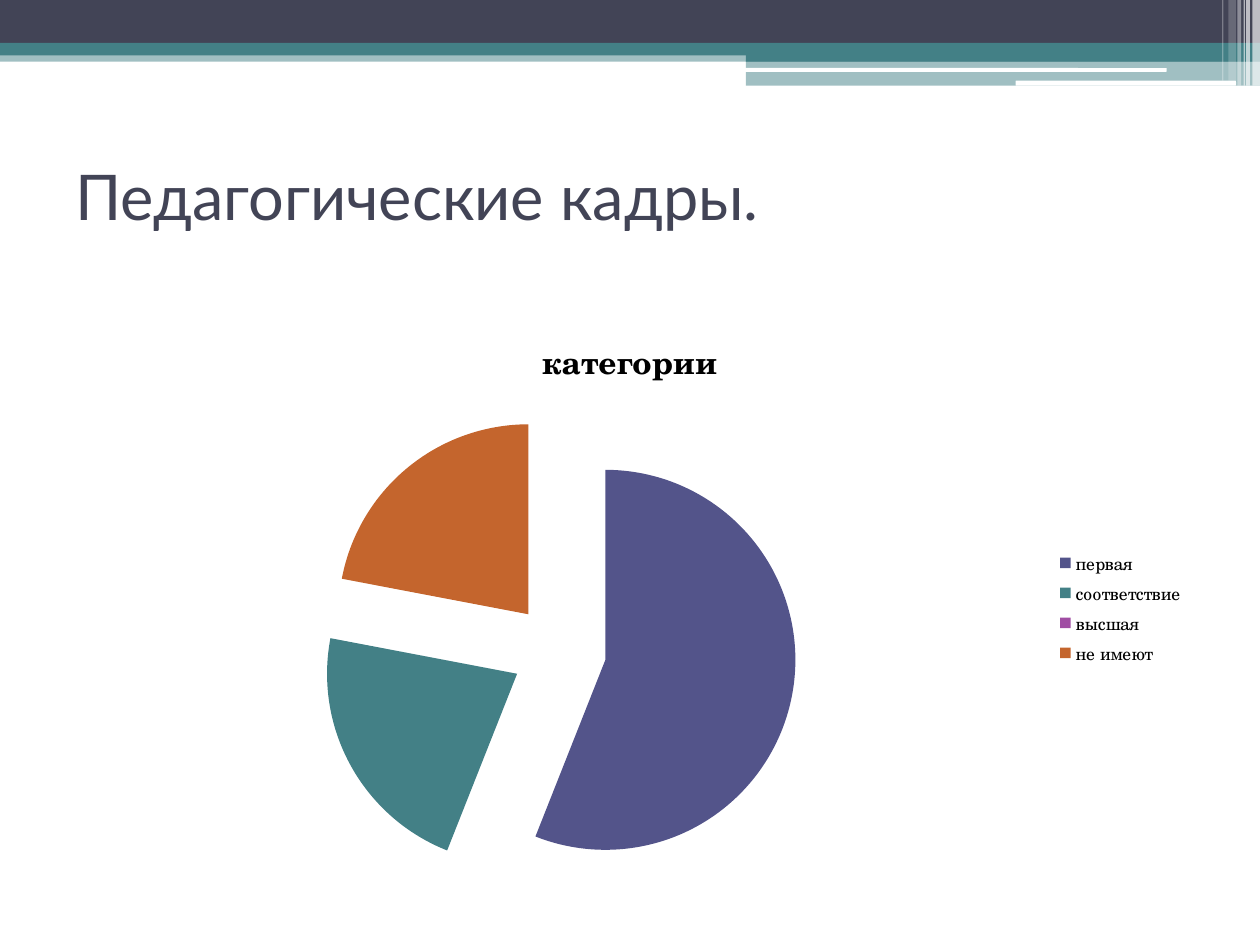
from lxml import etree
from pptx import Presentation
from pptx.chart.data import CategoryChartData
from pptx.dml.color import RGBColor
from pptx.enum.chart import XL_CHART_TYPE as CT, XL_LEGEND_POSITION as LP
from pptx.enum.shapes import MSO_SHAPE as SHAPE
from pptx.enum.text import MSO_ANCHOR as ANCHOR
from pptx.oxml.ns import qn
from pptx.util import Inches, Pt

COLORS = {"dark": "424456", "teal": "438086", "white": "FFFFFF", "text": "000000",
          "indigo": "53548A", "purple": "A04DA3", "orange": "C4652D"}
FONTS = {"title": "Lato", "chart": "TeX Gyre Schola"}


def rgb(name):
    return RGBColor.from_string(COLORS[name])


def style_font(font, formats):
    for name, value in formats.items():
        if name == "color":
            font.color.rgb = rgb(value)
        else:
            setattr(font, name, value)


def add_bar(slide, box, color, alpha=100, kind=SHAPE.RECTANGLE):
    sp = slide.shapes.add_shape(kind, *(Inches(v) for v in box))
    sp.shadow.inherit = False
    sp.line.fill.background()
    sp.fill.solid()
    sp.fill.fore_color.rgb = rgb(color)
    if alpha < 100:
        clr = sp.fill._xPr.find(qn("a:solidFill"))[0]
        etree.SubElement(clr, qn("a:alpha"), val=str(alpha * 1000))
    return sp


def add_header(slide, left, top, width):
    # Full-width bands: top, height, colour, opacity
    for y, h, color, alpha in [(0.4, 0.09, "teal", 50), (0, 0.34, "dark", 100),
                               (0.34, 0.1, "teal", 100)]:
        add_bar(slide, (left, top + y, width, h), color, alpha)

    # Step on the right
    step = 5.92
    for y, h, alpha in [(0.39, 0.1, 100), (0.48, 0.2, 50)]:
        add_bar(slide, (left + step, top + y, width - step, h), "teal", alpha)

    # White rules
    for x, y, w, h in [(5.91, 0.54, 3.35, 0.03), (8.06, 0.64, 1.75, 0.04)]:
        add_bar(slide, (left + x, top + y, w, h), "white", kind=SHAPE.ROUNDED_RECTANGLE)

    # Translucent stripes at the right edge: left, width, height, opacity
    for x, w, h, alpha in [(9.94, 0.06, 0.68, 65), (9.89, 0.03, 0.68, 65),
                           (9.87, 0.01, 0.68, 60), (9.82, 0.03, 0.68, 40),
                           (9.75, 0.06, 0.64, 20), (9.7, 0.01, 0.64, 30)]:
        add_bar(slide, (left + x, top, w, h), "white", alpha)


def add_title(slide, left, top, width, height):
    tf = slide.shapes.add_textbox(*map(Inches, (left, top, width, height))).text_frame
    for name, value in {"word_wrap": True, "vertical_anchor": ANCHOR.TOP,
                        "margin_top": 0}.items():
        setattr(tf, name, value)
    r = tf.paragraphs[0].add_run()
    r.text = "Педагогические кадры."
    style_font(r.font, {"name": FONTS["title"], "size": Pt(36), "color": "dark"})


def add_pie(slide, left, top, width, height):
    slices = [("первая", 56, "indigo"), ("соответствие", 22, "teal"),
              ("высшая", 0, "purple"), ("не имеют", 22, "orange")]
    data = CategoryChartData()
    data.categories = [name for name, _, _ in slices]
    data.add_series("категории", [value for _, value, _ in slices])
    chart = slide.shapes.add_chart(
        CT.PIE, *map(Inches, (left, top, width, height)), data).chart
    base = {"name": FONTS["chart"], "size": Pt(10), "color": "text"}
    style_font(chart.font, base)

    # Title and legend
    chart.has_title = True
    tf = chart.chart_title.text_frame
    tf.text = "категории"
    style_font(tf.paragraphs[0].runs[0].font, {**base, "size": Pt(18), "bold": True})
    chart.chart_title.include_in_layout = False
    chart.has_legend = True
    chart.legend.position = LP.RIGHT
    chart.legend.include_in_layout = False

    # Slices, pulled apart
    plot = chart.plots[0]
    plot.vary_by_categories = True
    series = plot.series[0]
    for i, (_, _, color) in enumerate(slices):
        fill = series.points[i].format.fill
        fill.solid()
        fill.fore_color.rgb = rgb(color)
    explosion = etree.Element(qn("c:explosion"), val="25")
    series._element.find(qn("c:dPt")).addprevious(explosion)


def main():
    prs = Presentation()
    prs.slide_width, prs.slide_height = Inches(10), Inches(7.5)
    slide = prs.slides.add_slide(prs.slide_layouts[6])
    add_header(slide, 0, 0, 10)
    add_title(slide, 0.5, 1.25, 9, 1.17)
    add_pie(slide, 0.5, 2.46, 9, 4.73)
    prs.save("out.pptx")


if __name__ == "__main__":
    main()
